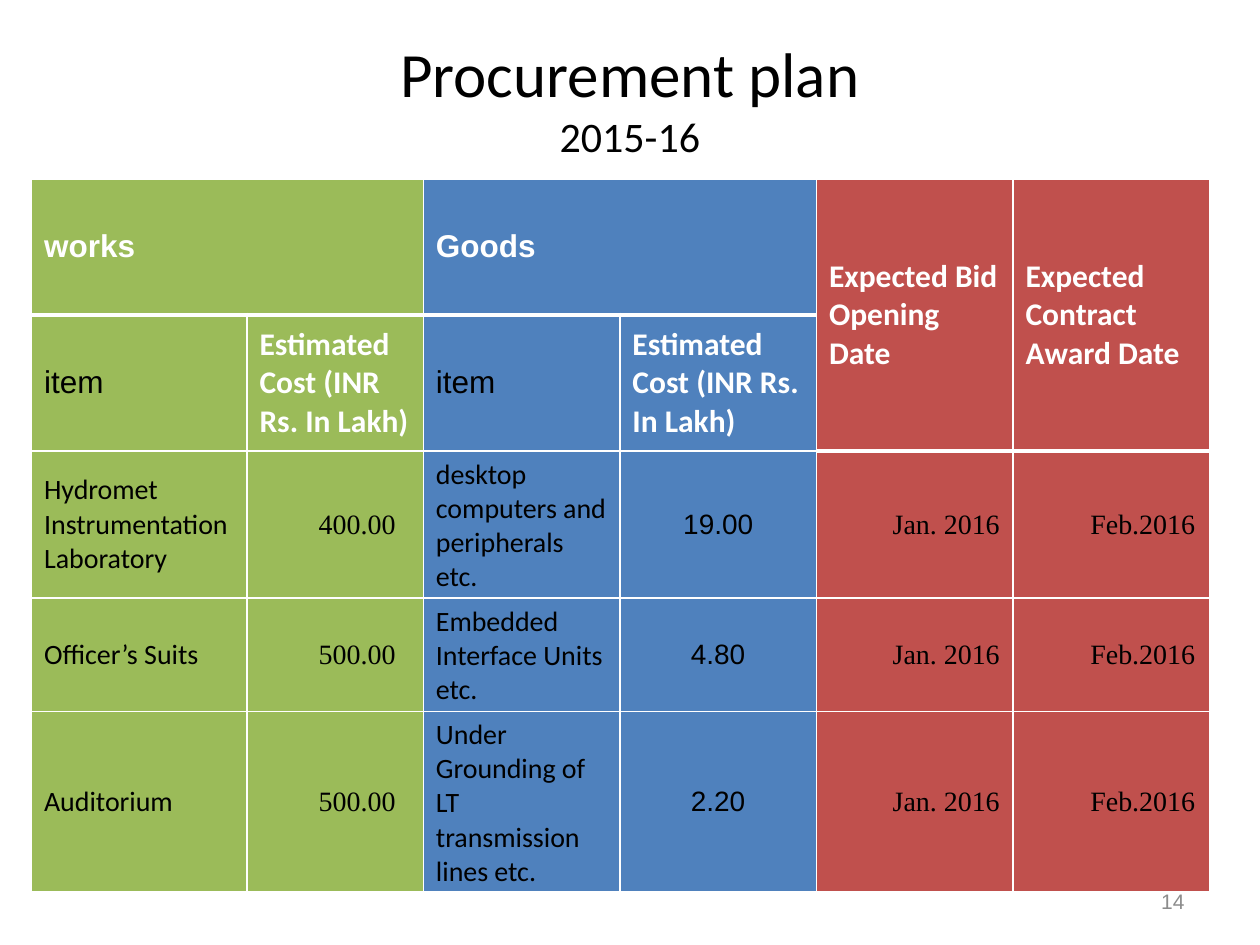
from lxml.etree import SubElement
from pptx import Presentation
from pptx.dml.color import RGBColor
from pptx.enum.text import MSO_ANCHOR, PP_ALIGN
from pptx.oxml.ns import qn
from pptx.util import Inches, Pt

BLACK = RGBColor(0, 0, 0)
WHITE = RGBColor(255, 255, 255)
GRAY = RGBColor(0x8C, 0x8C, 0x8C)
GREEN = RGBColor(0x9B, 0xBB, 0x59)
BLUE = RGBColor(0x4F, 0x81, 0xBD)
RED = RGBColor(0xC0, 0x50, 0x4D)

FILLS = [GREEN, GREEN, BLUE, BLUE, RED, RED]
WIDTHS = [1.71, 1.4, 1.56, 1.56, 1.56, 1.56]
HEIGHTS = [1.08, 1.08, 1.15, 0.89, 1.41]
MERGES = [(0, 0, 0, 1), (0, 2, 0, 3), (0, 4, 1, 4), (0, 5, 1, 5)]
COST = "Estimated Cost (INR Rs. In Lakh)"
DATES = ["Jan. 2016", "Feb.2016"]
ROWS = [
    ["works", "", "Goods", "", "Expected Bid Opening Date",
     "Expected Contract Award Date"],
    ["item", COST, "item", COST, "", ""],
    ["Hydromet Instrumentation Laboratory", "400.00",
     "desktop computers and peripherals etc.", "19.00", *DATES],
    ["Officer’s Suits", "500.00", "Embedded Interface Units etc.", "4.80",
     *DATES],
    ["Auditorium", "500.00", "Under Grounding of LT transmission lines etc.",
     "2.20", *DATES],
]


def font(name, size, color=BLACK, bold=False):
    return {"name": name, "size": Pt(size), "bold": bold, "color": color}


HEAD = font("Calibri", 18, WHITE, True)
GROUP = font("Arial", 18, WHITE, True)
ITEM = font("Arial", 18)
BODY = font("Calibri", 16)
COUNT = font("Arial", 16)
SERIF = font("Times New Roman", 16)
LEFT, MID = PP_ALIGN.LEFT, PP_ALIGN.CENTER
# Font, alignment and whether the text is indented, by column
COLUMNS = [(BODY, LEFT, False), (SERIF, LEFT, True), (BODY, LEFT, False),
           (COUNT, MID, False), (SERIF, MID, True), (SERIF, MID, True)]


def look(row, col):
    """Return the font, alignment and indent flag of a cell."""
    if row > 1:
        return COLUMNS[col]
    special = {(0, 0): GROUP, (0, 2): GROUP, (1, 0): ITEM, (1, 2): ITEM}
    return special.get((row, col), HEAD), LEFT, False


class Deck:
    def __init__(self):
        self.show = Presentation()
        self.show.slide_width = Inches(10)
        self.show.slide_height = Inches(7.5)
        self.slide = self.show.slides.add_slide(self.show.slide_layouts[5])

    def text(self, para, words, style):
        run = para.add_run()
        run.text = words
        for key, value in style.items():
            if key == "color":
                run.font.color.rgb = value
            else:
                setattr(run.font, key, value)

    def place(self, shape, left, top, width, height):
        box = {"left": left, "top": top, "width": width, "height": height}
        for key, value in box.items():
            setattr(shape, key, Inches(value))

    def title(self, main, sub):
        shape = self.slide.shapes.title
        self.place(shape, 0.5, 0.3, 9, 0.95)
        frame = shape.text_frame
        frame.vertical_anchor = MSO_ANCHOR.MIDDLE
        para = frame.paragraphs[0]
        para.alignment = MID
        self.text(para, main, font("Calibri", 36))
        para.add_line_break()
        self.text(para, sub, font("Calibri", 24))

    def number(self, words):
        box = self.slide.shapes.add_textbox(
            Inches(7.17), Inches(6.95), Inches(2.33), Inches(0.4))
        frame = box.text_frame
        frame.word_wrap = True
        frame.vertical_anchor = MSO_ANCHOR.MIDDLE
        para = frame.paragraphs[0]
        para.alignment = PP_ALIGN.RIGHT
        self.text(para, words, font("Arial", 12, GRAY))

    def edges(self, cell, row, col):
        """Draw white cell borders, heavy below each top header."""
        last = 1 if col > 3 else 0
        sizes = {"L": 1, "R": 1, "T": 3 if row == last + 1 else 1,
                 "B": 3 if row in (0, last) else 1}
        props = cell._tc.get_or_add_tcPr()
        for side, size in sizes.items():
            line = SubElement(props, qn("a:ln" + side), w=str(Pt(size)))
            fill = SubElement(line, qn("a:solidFill"))
            SubElement(fill, qn("a:srgbClr"), val=str(WHITE))

    def cell(self, cell, row, col, words):
        self.edges(cell, row, col)
        cell.fill.solid()
        cell.fill.fore_color.rgb = FILLS[col]
        cell.vertical_anchor = MSO_ANCHOR.MIDDLE
        if not words:
            return
        style, align, inset = look(row, col)
        para = cell.text_frame.paragraphs[0]
        para.alignment = align
        if inset:
            cell.margin_left = cell.margin_right = Inches(0.07)
            cell.margin_top = cell.margin_bottom = 0
            para.line_spacing = 1.05
            para._p.get_or_add_pPr().set("marL", str(Inches(0.5)))
        self.text(para, words, style)

    def table(self, rows):
        table = self.slide.shapes.add_table(
            len(rows), len(WIDTHS), Inches(0.25), Inches(1.42),
            Inches(sum(WIDTHS)), Inches(sum(HEIGHTS))).table
        for part, width in zip(table.columns, WIDTHS):
            part.width = Inches(width)
        for part, height in zip(table.rows, HEIGHTS):
            part.height = Inches(height)
        for row, line in enumerate(rows):
            for col, words in enumerate(line):
                self.cell(table.cell(row, col), row, col, words)
        for top, left, bottom, right in MERGES:
            table.cell(top, left).merge(table.cell(bottom, right))


def main():
    deck = Deck()
    deck.title("Procurement plan", "2015-16")
    deck.number("14")
    deck.table(ROWS)
    deck.show.save("out.pptx")


if __name__ == "__main__":
    main()
